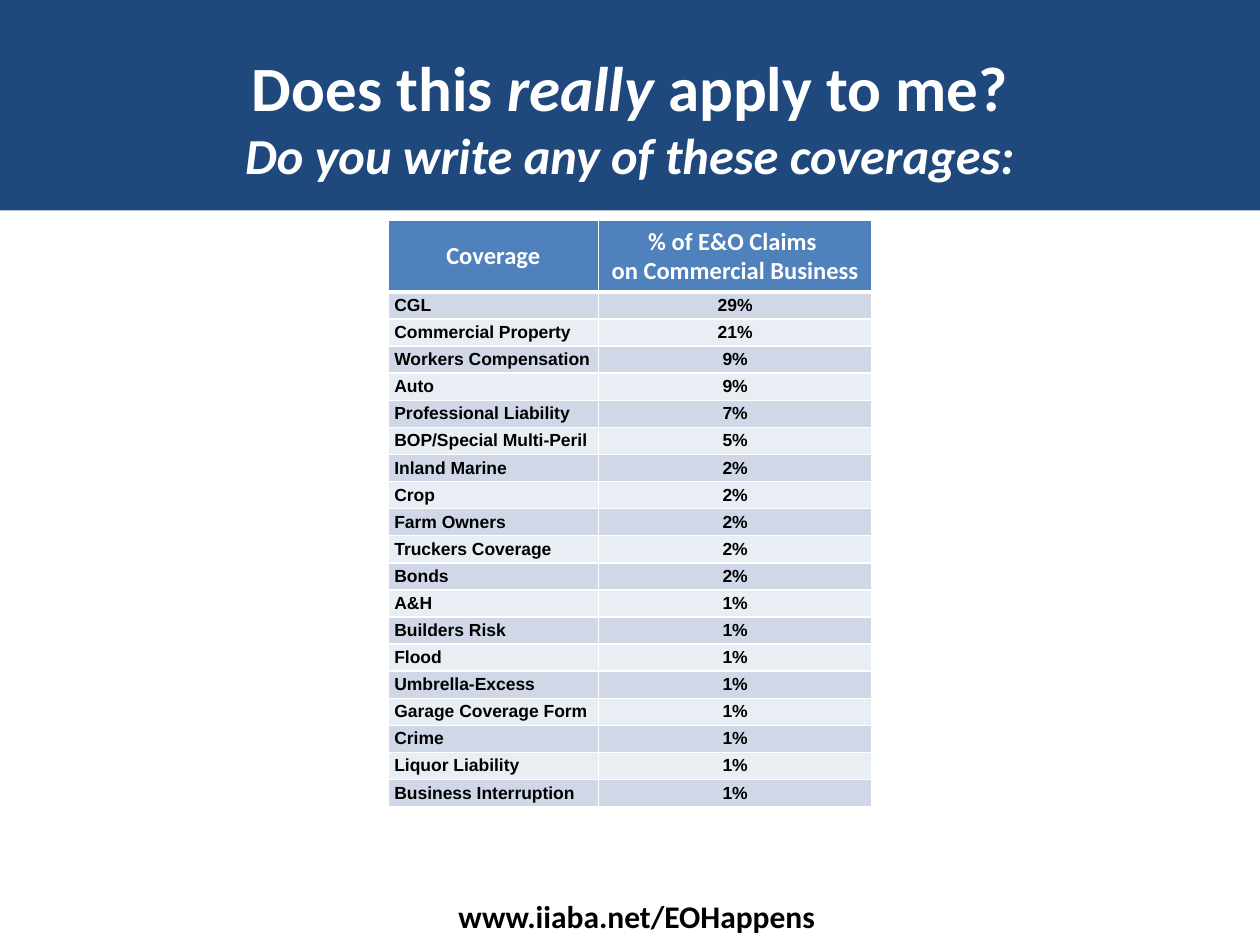
from pptx import Presentation
from pptx import util as u
from pptx.dml.color import RGBColor
from pptx.enum import shapes, text
from pptx.oxml import parse_xml
from pptx.oxml.ns import nsdecls


def add_run(p, words, size, color, font="Calibri", italic=False):
    r = p.add_run()
    r.text = words
    r.font.name = font
    r.font.size = u.Pt(size)
    r.font.bold = True
    r.font.italic = italic
    r.font.color.rgb = RGBColor.from_string(color)


def add_borders(cell, top, bottom):
    for side, width in (("L", 1), ("R", 1), ("T", top), ("B", bottom)):
        cell._tc.get_or_add_tcPr().append(parse_xml(
            f'<a:ln{side} {nsdecls("a")} w="{u.Pt(width)}"><a:solidFill>'
            f'<a:srgbClr val="FFFFFF"/></a:solidFill></a:ln{side}>'))


prs = Presentation()
prs.slide_width, prs.slide_height = u.Inches(10), u.Inches(7.5)
s = prs.slides.add_slide(prs.slide_layouts[5])

title = s.shapes.title
band = s.shapes.add_shape(shapes.MSO_SHAPE.RECTANGLE, 0, 0, prs.slide_width, u.Inches(1.67))
band.shadow.inherit = False
band.fill.solid()
band.fill.fore_color.rgb = RGBColor.from_string("1F497D")
band.line.fill.background()
title._element.addprevious(band._element)

title.left, title.top = u.Inches(0.5), u.Inches(0.3)
title.width, title.height = u.Inches(9), u.Inches(1.25)
tf = title.text_frame
tf.auto_size = text.MSO_AUTO_SIZE.NONE
tf.vertical_anchor = text.MSO_ANCHOR.MIDDLE
p = tf.paragraphs[0]
p.alignment = text.PP_ALIGN.CENTER
add_run(p, "Does this ", 36, "FFFFFF")
add_run(p, "really", 36, "FFFFFF", italic=True)
add_run(p, " apply to me?", 36, "FFFFFF")
p.add_line_break()
add_run(p, "Do you write any of these coverages:", 28.8, "FFFFFF", italic=True)

sp = s.shapes.add_textbox(u.Inches(3.54), u.Inches(7.07), u.Inches(3.67), u.Inches(0.4))
tf = sp.text_frame
tf.word_wrap = True
add_run(tf.paragraphs[0], "www.iiaba.net/EOHappens", 18, "000000")

rows = [
    ("Coverage", "% of E&O Claims \non Commercial Business"),
    ("CGL", "29%"),
    ("Commercial Property", "21%"),
    ("Workers Compensation", "9%"),
    ("Auto", "9%"),
    ("Professional Liability", "7%"),
    ("BOP/Special Multi-Peril", "5%"),
    ("Inland Marine", "2%"),
    ("Crop", "2%"),
    ("Farm Owners", "2%"),
    ("Truckers Coverage", "2%"),
    ("Bonds", "2%"),
    ("A&H", "1%"),
    ("Builders Risk", "1%"),
    ("Flood", "1%"),
    ("Umbrella-Excess", "1%"),
    ("Garage Coverage Form", "1%"),
    ("Crime", "1%"),
    ("Liquor Liability", "1%"),
    ("Business Interruption", "1%"),
]
header_height, body_height = 0.56, 4.09
table = s.shapes.add_table(len(rows), 2, u.Inches(3.08), u.Inches(1.75), u.Inches(3.84),
                           u.Inches(header_height + body_height)).table
table.columns[0].width, table.columns[1].width = u.Inches(1.67), u.Inches(2.17)

for i, row in enumerate(rows):
    header = i == 0
    table.rows[i].height = u.Inches(header_height if header else body_height / (len(rows) - 1))
    fill = "4F81BD" if header else ("E9EDF4", "D0D8E8")[i % 2]
    size, color, font = (14, "FFFFFF", "Calibri") if header else (10, "000000", "Arial")
    for j, words in enumerate(row):
        cell = table.cell(i, j)
        add_borders(cell, 3 if i == 1 else 1, 3 if header else 1)
        cell.fill.solid()
        cell.fill.fore_color.rgb = RGBColor.from_string(fill)
        cell.vertical_anchor = text.MSO_ANCHOR.MIDDLE
        cell.margin_left = cell.margin_right = u.Inches(0.05)
        cell.margin_top = cell.margin_bottom = u.Inches(0.05 if header else 0.02)
        p = cell.text_frame.paragraphs[0]
        p.alignment = text.PP_ALIGN.CENTER if header or j else text.PP_ALIGN.LEFT
        for k, line in enumerate(words.split("\n")):
            if k:
                p.add_line_break()
            add_run(p, line, size, color, font)

prs.save("out.pptx")
